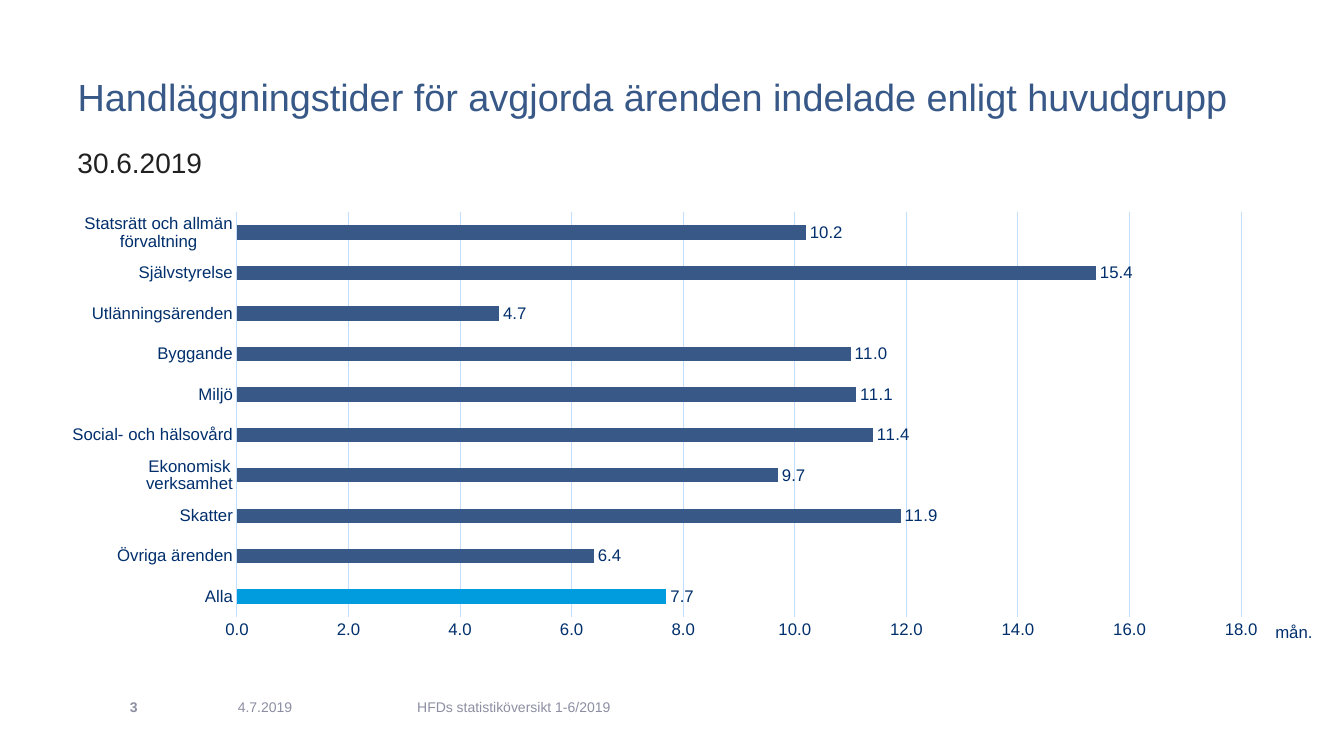
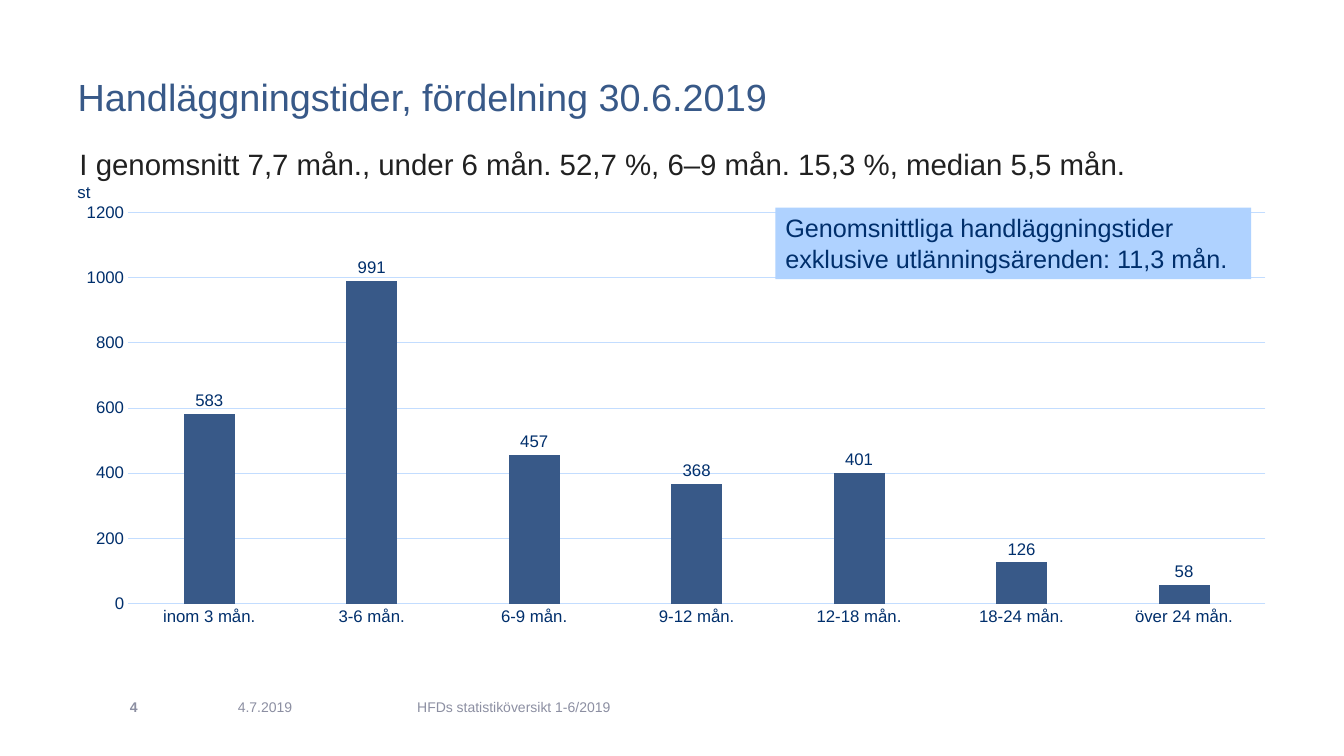
import pptx
import pptx.chart.data
import pptx.dml.color
import pptx.enum.chart
import pptx.enum.shapes
import pptx.enum.text
import pptx.oxml
import pptx.util
from pptx.util import Inches

# Shared colours and font
RGBColor = pptx.dml.color.RGBColor
BLUE = RGBColor(0x38, 0x59, 0x88)
BRIGHT = RGBColor(0x00, 0x9C, 0xDE)
NAVY = RGBColor(0x00, 0x2F, 0x6C)
GRID = RGBColor(0xC3, 0xDD, 0xFF)
PALE = RGBColor(0xAF, 0xD2, 0xFF)
GREY = RGBColor(0x8C, 0x8F, 0xA2)
DARK = RGBColor(0x21, 0x21, 0x21)
FONT = "Arial"

XL = pptx.enum.chart
ANCHOR = pptx.enum.text.MSO_ANCHOR
NS = "http://schemas.openxmlformats.org/drawingml/2006/chart"


def set_font(font, size, color, bold=False):
    font.name = FONT
    font.size = pptx.util.Pt(size)
    font.color.rgb = color
    font.bold = bold


def write(sp, text, size=12, color=NAVY, bold=False, anchor=ANCHOR.TOP):
    """Put one left-aligned paragraph into a shape."""
    tf = sp.text_frame
    tf.word_wrap = True
    tf.vertical_anchor = anchor
    p = tf.paragraphs[0]
    p.alignment = pptx.enum.text.PP_ALIGN.LEFT
    r = p.add_run()
    r.text = text
    set_font(r.font, size, color, bold)


class Deck:
    def __init__(self):
        self.prs = pptx.Presentation()
        self.prs.slide_width = Inches(13.33)
        self.prs.slide_height = Inches(7.5)
        self.s = None

    def slide(self, title, number):
        self.s = self.prs.slides.add_slide(self.prs.slide_layouts[5])
        sp = self.s.shapes.title
        sp.left, sp.top = Inches(0.67), Inches(0.52)
        sp.width, sp.height = Inches(12), Inches(0.87)
        write(sp, title, size=27, color=BLUE, anchor=ANCHOR.MIDDLE)
        # Footer
        for text, left, width, bold in (
            (str(number), 1.19, 1.07, True),
            ("4.7.2019", 2.26, 1.78, False),
            ("HFDs statistiköversikt 1-6/2019", 4.04, 2.73, False),
        ):
            self.text(text, left, 6.81, width, 0.4, size=10, color=GREY,
                      bold=bold, anchor=ANCHOR.MIDDLE)

    def text(self, text, left, top, width, height, **style):
        sp = self.s.shapes.add_textbox(
            Inches(left), Inches(top), Inches(width), Inches(height))
        write(sp, text, **style)

    def callout(self, text, left, top, width, height, **style):
        sp = self.s.shapes.add_shape(
            pptx.enum.shapes.MSO_SHAPE.RECTANGLE,
            Inches(left), Inches(top), Inches(width), Inches(height))
        sp.shadow.inherit = False
        sp.fill.solid()
        sp.fill.fore_color.rgb = PALE
        sp.line.fill.background()
        write(sp, text, **style)

    def chart(self, kind, data, top_value, step, gap, area,
              overlap=0, number_format="General", highlight=None):
        chart_data = pptx.chart.data.CategoryChartData()
        chart_data.categories = list(data)
        chart_data.add_series("Series 1", list(data.values()))
        chart = self.s.shapes.add_chart(
            kind, Inches(0.67), Inches(2.02), Inches(12), Inches(4.41),
            chart_data).chart
        chart.has_legend = False
        chart.has_title = False
        set_font(chart.font, 10, NAVY)
        self.plot_area(chart, area)

        # Bars and value labels
        plot = chart.plots[0]
        plot.vary_by_categories = False
        plot.gap_width = gap
        plot.overlap = overlap
        series = plot.series[0]
        self.fill(series, BLUE)
        if highlight is not None:
            self.fill(series.points[highlight], BRIGHT)
        labels = series.data_labels
        labels.show_value = True
        labels.position = XL.XL_LABEL_POSITION.OUTSIDE_END
        self.number_format(labels, number_format)
        set_font(labels.font, 12, NAVY)

        # Axes
        for axis in (chart.category_axis, chart.value_axis):
            axis.major_tick_mark = XL.XL_TICK_MARK.NONE
            axis.minor_tick_mark = XL.XL_TICK_MARK.NONE
            set_font(axis.tick_labels.font, 12, NAVY)
        self.line(chart.category_axis.format.line)
        axis = chart.value_axis
        axis.minimum_scale, axis.maximum_scale = 0, top_value
        axis.major_unit = step
        axis.format.line.fill.background()
        axis.has_major_gridlines = True
        self.line(axis.major_gridlines.format.line)
        self.number_format(axis.tick_labels, number_format)

    @staticmethod
    def fill(item, color):
        item.format.fill.solid()
        item.format.fill.fore_color.rgb = color

    @staticmethod
    def line(line):
        line.color.rgb = GRID
        line.width = pptx.util.Pt(0.75)

    @staticmethod
    def number_format(labels, code):
        labels.number_format = code
        labels.number_format_is_linked = False

    @staticmethod
    def plot_area(chart, area):
        """Fix the inner plot area as fractions of the chart."""
        parts = "".join(f'<c:{tag} val="{value}"/>' for tag, value in
                        zip(("x", "y", "w", "h"), area))
        layout = pptx.oxml.parse_xml(
            f'<c:layout xmlns:c="{NS}"><c:manualLayout>'
            '<c:layoutTarget val="inner"/><c:xMode val="edge"/>'
            f'<c:yMode val="edge"/>{parts}</c:manualLayout></c:layout>')
        plot_area = chart._chartSpace.chart.plotArea
        for old in plot_area.findall(f"{{{NS}}}layout"):
            plot_area.remove(old)
        plot_area.insert(0, layout)


MONTHS_BY_GROUP = {
    "Alla": 7.7,
    "Övriga ärenden": 6.4,
    "Skatter": 11.9,
    "Ekonomisk verksamhet": 9.7,
    "Social- och hälsovård": 11.4,
    "Miljö": 11.1,
    "Byggande": 11,
    "Utlänningsärenden": 4.7,
    "Självstyrelse": 15.4,
    "Statsrätt och allmän förvaltning": 10.2,
}
CASES_BY_TIME = {
    "inom 3 mån.": 583,
    "3-6 mån.": 991,
    "6-9 mån.": 457,
    "9-12 mån.": 368,
    "12-18 mån.": 401,
    "18-24 mån.": 126,
    "över 24 mån.": 58,
}


def main():
    deck = Deck()

    # Processing times by main group
    deck.slide("Handläggningstider för avgjorda ärenden indelade enligt "
               "huvudgrupp", 3)
    deck.chart(XL.XL_CHART_TYPE.BAR_CLUSTERED, MONTHS_BY_GROUP, 18, 2,
               gap=182, area=(0.14, 0.02, 0.83, 0.91),
               number_format="0.0", highlight=0)
    deck.text("30.6.2019", 0.67, 1.39, 12, 0.47, size=20, color=DARK)
    deck.text("mån.", 12.55, 6.12, 0.78, 0.3)

    # Distribution of processing times
    deck.slide("Handläggningstider, fördelning 30.6.2019", 4)
    deck.chart(XL.XL_CHART_TYPE.COLUMN_CLUSTERED, CASES_BY_TIME, 1200, 200,
               gap=219, overlap=-27, area=(0.05, 0.02, 0.94, 0.88))
    deck.text("I genomsnitt 7,7 mån., under 6 mån. 52,7 %, 6–9 mån. 15,3 %, "
              "median 5,5 mån.", 0.69, 1.4, 12, 0.47, size=21, color=DARK)
    deck.text("st", 0.67, 1.75, 0.79, 0.3)
    deck.callout("Genomsnittliga handläggningstider exklusive "
                 "utlänningsärenden: 11,3 mån.", 7.69, 2.06, 4.72, 0.71,
                 size=18)

    deck.prs.save("out.pptx")


if __name__ == "__main__":
    main()
